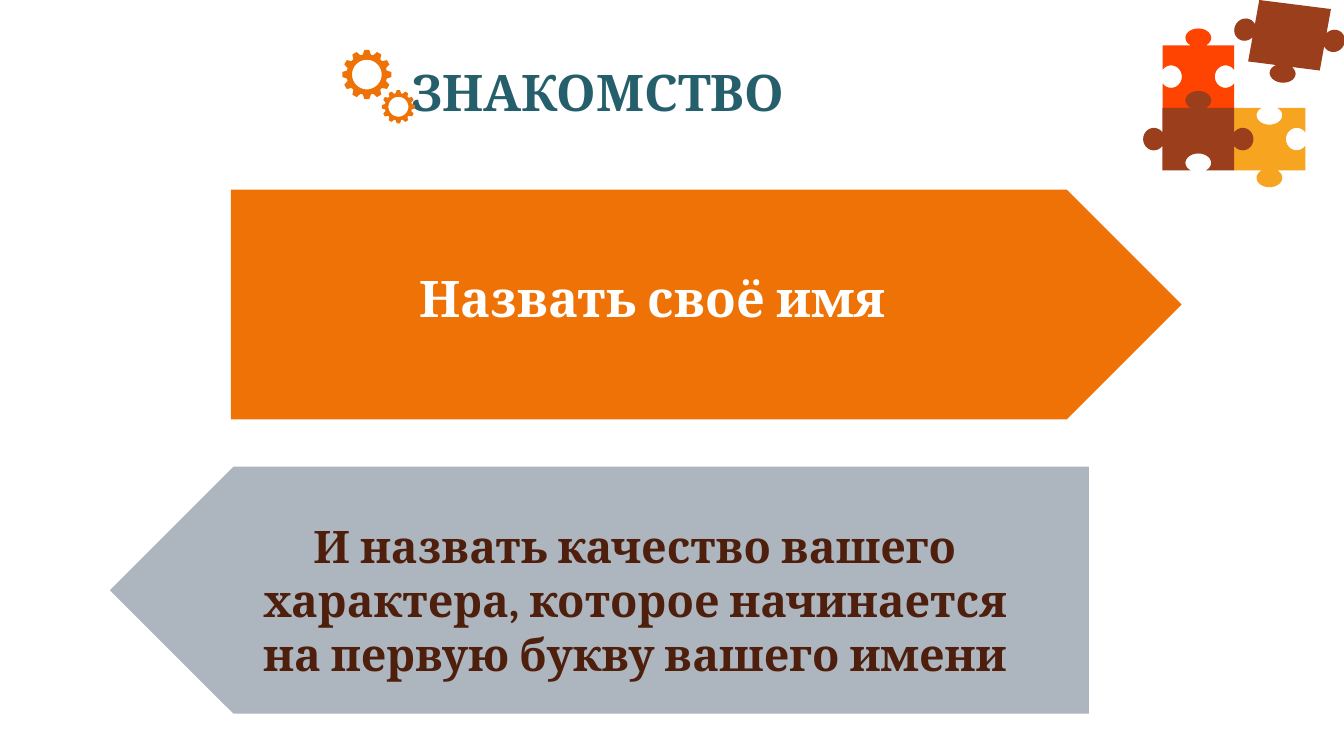
"""Build the introduction slide with its arrows, puzzle and gears."""
import math

import pptx
import pptx.dml.color
import pptx.enum.shapes
import pptx.enum.text
import pptx.util

WIDE = pptx.util.Inches(13.33)
HIGH = pptx.util.Inches(7.5)
FONT = "Cambria"
HUES = {
    "orange": "EE7206",
    "grey": "ADB5BF",
    "teal": "265F6C",
    "white": "FFFFFF",
    "dark": "4E1F0D",
    "yellow": "F7A521",
    "brown": "9B3E1B",
    "red": "FF4300",
}
OUT, FLAT, IN = 1, 0, -1


def hue(name):
    """Return the named colour."""
    return pptx.dml.color.RGBColor.from_string(HUES[name])


def spot(x, y):
    """Turn percent shares of the slide into lengths."""
    return round(x * WIDE / 100), round(y * HIGH / 100)


def paint(shape, name):
    """Give a shape a plain fill with no line or shadow."""
    shape.fill.solid()
    shape.fill.fore_color.rgb = hue(name)
    shape.line.fill.background()
    shape.shadow.inherit = False


def arrow(slide, box, name, flip=False):
    """Add a pentagon arrow, pointing left when flipped."""
    kind = pptx.enum.shapes.MSO_SHAPE.PENTAGON
    shape = slide.shapes.add_shape(kind, *spot(*box[:2]), *spot(*box[2:]))
    paint(shape, name)
    if flip:
        shape._element.spPr.xfrm.set("flipH", "1")


def label(slide, box, text, size, name, align="CENTER", title=False):
    """Add a bold text box."""
    shape = slide.shapes.add_textbox(*spot(*box[:2]), *spot(*box[2:]))
    frame = shape.text_frame
    frame.word_wrap = True
    frame.text = text
    para = frame.paragraphs[0]
    para.alignment = getattr(pptx.enum.text.PP_ALIGN, align)
    if title:
        frame.vertical_anchor = pptx.enum.text.MSO_ANCHOR.BOTTOM
        para.line_spacing = 0.9
    else:
        frame.auto_size = pptx.enum.text.MSO_AUTO_SIZE.SHAPE_TO_FIT_TEXT
    font = para.runs[0].font
    font.name, font.size, font.bold = FONT, pptx.util.Pt(size), True
    font.color.rgb = hue(name)


def form(slide, loops, name):
    """Add one freeform made of closed loops of points."""
    first, *rest = loops
    build = slide.shapes.build_freeform(*first[0], scale=1.0)
    build.add_line_segments(first[1:], close=True)
    for loop in rest:
        build.move_to(*loop[0])
        build.add_line_segments(loop[1:], close=True)
    paint(build.convert_to_shape(), name)


def edge(knob, steps=20):
    """Trace the top side of a unit tile, with its knob or socket."""
    points = [(-0.5, -0.5)]
    if knob:
        start = math.pi + math.asin(0.8)
        sweep = math.pi + 2 * math.asin(0.8)
        for step in range(steps + 1):
            turn = start - sweep * step / steps
            rise = 0.12 + 0.15 * math.sin(turn)
            points.append((0.18 * math.cos(turn), -0.5 - knob * rise))
    return points


def tile(slide, mid, name, knobs, across=(5.33, 0), down=(0, 8.27)):
    """Add a puzzle tile; knobs run top, right, bottom, left."""
    loop = []
    for side, knob in enumerate(knobs):
        for u, v in edge(knob):
            for _ in range(side):
                u, v = -v, u
            loop.append(spot(mid[0] + u * across[0] + v * down[0],
                             mid[1] + u * across[1] + v * down[1]))
    form(slide, [loop], name)


def ring(mid, reach, turns):
    """Place points round a centre from pairs of angle and share of reach."""
    x, y = spot(*mid)
    size = reach * HIGH / 100
    return [(round(x + size * part * math.sin(turn)),
             round(y - size * part * math.cos(turn))) for turn, part in turns]


def gear(mid, reach, teeth=12):
    """Return the toothed rim and the round hole of a gear."""
    tooth = [(-0.2, 0.82), (-0.1, 1), (0.1, 1), (0.2, 0.82)]
    rim = [(math.tau * n / teeth + turn, part)
           for n in range(teeth) for turn, part in tooth]
    hole = [(-math.tau * n / 48, 0.6) for n in range(48)]
    return [ring(mid, reach, rim), ring(mid, reach, hole)]


def main():
    """Build and save the slide."""
    deck = pptx.Presentation()
    deck.slide_width, deck.slide_height = WIDE, HIGH
    slide = deck.slides.add_slide(deck.slide_layouts[6])

    tile(slide, (94.45, 18.4), "yellow", (IN, IN, OUT, FLAT))
    tile(slide, (95.95, 4.67), "brown", (FLAT, OUT, OUT, OUT),
         across=(5.33, 1.2), down=(-0.83, 8.13))
    tile(slide, (89.16, 10.13), "red", (OUT, IN, FLAT, IN))
    tile(slide, (89.16, 18.4), "brown", (OUT, OUT, IN, OUT))

    label(slide, (19.28, 7.2, 50.41, 9.6), "ЗНАКОМСТВО", 36, "teal",
          title=True)
    arrow(slide, (17.18, 25.07, 70.74, 30.4), "orange")
    arrow(slide, (8.18, 61.73, 72.84, 32.67), "grey", flip=True)
    label(slide, (30.46, 34.67, 49.29, 9.47), "Назвать своё имя", 36,
          "white", align="LEFT")
    label(slide, (17.25, 68, 60.01, 22.93),
          "И назвать качество вашего характера, которое начинается "
          "на первую букву вашего имени", 32, "dark")
    form(slide, gear((29.65, 14.13), 2.2) + gear((27.3, 9.87), 3.27),
         "orange")
    deck.save("out.pptx")


if __name__ == "__main__":
    main()
